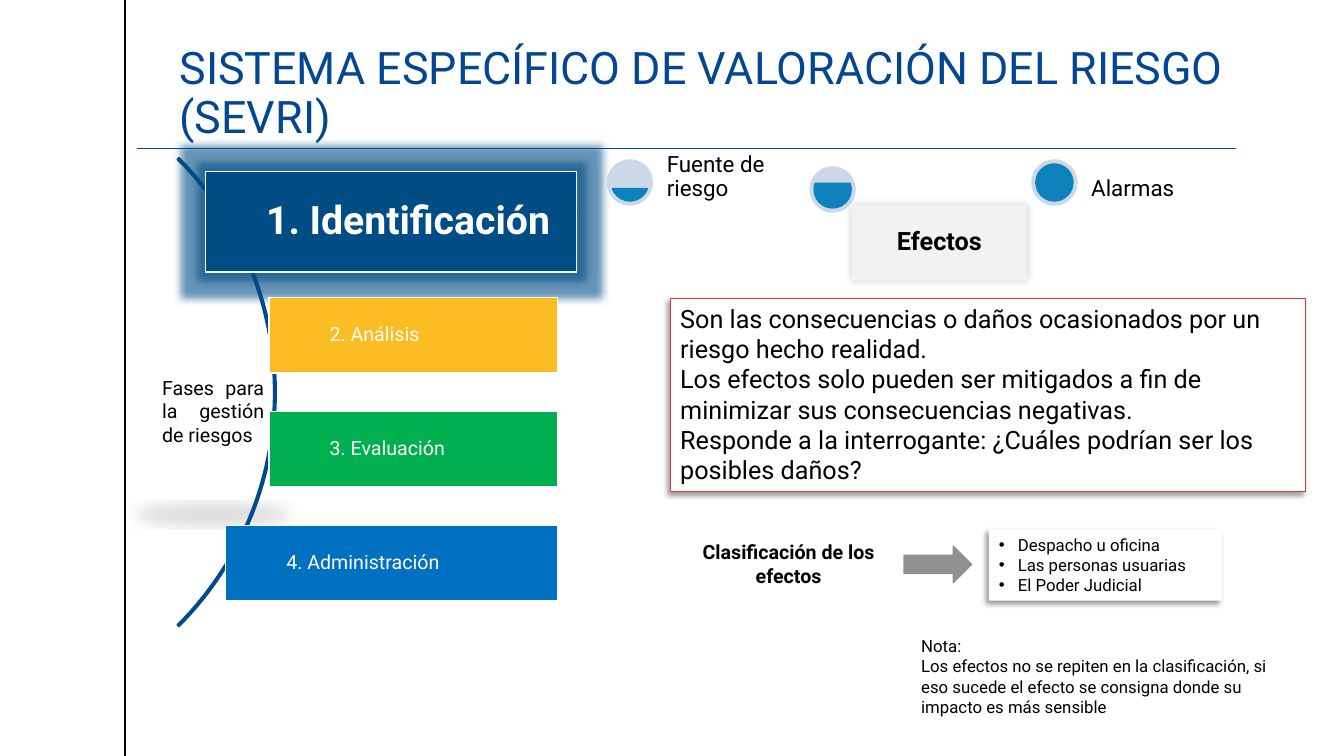
"""Builds the slide on the effects step of the SEVRI risk assessment system."""
from dataclasses import dataclass

from lxml.etree import SubElement
from pptx import Presentation
from pptx.dml.color import RGBColor
from pptx.enum.shapes import MSO_CONNECTOR, MSO_SHAPE
from pptx.enum.text import MSO_ANCHOR, MSO_AUTO_SIZE, PP_ALIGN
from pptx.oxml.ns import qn
from pptx.util import Pt


@dataclass(frozen=True)
class Theme:
    font: str = "Roboto"
    black: str = "000000"
    white: str = "FFFFFF"
    title: str = "034793"
    navy: str = "004D86"
    yellow: str = "FCBD24"
    green: str = "00B050"
    blue: str = "0070C0"
    red: str = "EC3A3B"
    gray: str = "909090"
    panel: str = "F2F2F2"
    dial: str = "CCD8E7"
    level: str = "0D81BB"
    title_size: int = 32
    active_size: int = 28
    large: int = 18
    label: int = 16
    body: int = 14
    small: int = 12


theme = Theme()


def style(shape, fill, line=None, effect=None, alpha=0, **settings):
    """Sets the fill, the outline and an optional shadow or glow."""
    shape.fill.solid()
    shape.fill.fore_color.rgb = RGBColor.from_string(fill)
    if line:
        shape.line.color.rgb = RGBColor.from_string(line)
        shape.line.width = Pt(1)
    else:
        shape.line.fill.background()
    shape.shadow.inherit = False
    if effect:
        effects = shape._element.spPr.find(qn("a:effectLst"))
        node = SubElement(effects, qn(effect), {key: str(value) for key, value in settings.items()})
        color = SubElement(node, qn("a:srgbClr"), val=theme.navy if effect == "a:glow" else theme.black)
        SubElement(color, qn("a:alpha"), val=str(alpha * 1000))
    return shape


def write(shape, lines, size, color=theme.black, bold=False, align=PP_ALIGN.LEFT,
          anchor=MSO_ANCHOR.TOP, insets=(7.2, 3.6, 7.2, 3.6), spacing=1.0, bullet=None):
    """Fills a shape with one paragraph per line."""
    frame = shape.text_frame
    frame.word_wrap = True
    frame.auto_size = MSO_AUTO_SIZE.NONE
    frame.vertical_anchor = anchor
    frame.margin_left, frame.margin_top, frame.margin_right, frame.margin_bottom = map(Pt, insets)
    for index, line in enumerate(lines):
        para = frame.add_paragraph() if index else frame.paragraphs[0]
        para.alignment = align
        para.line_spacing = spacing
        para.space_before = para.space_after = Pt(0)
        if bullet:
            properties = para._p.get_or_add_pPr()
            properties.set("marL", str(Pt(13.5)))
            properties.set("indent", str(Pt(-13.5)))
            SubElement(properties, qn("a:buFont"), typeface="Arial")
            SubElement(properties, qn("a:buChar"), char=bullet)
        span = para.add_run()
        span.text = line
        span.font.name = theme.font
        span.font.size = Pt(size)
        span.font.bold = bold
        span.font.color.rgb = RGBColor.from_string(color)


deck = Presentation()
deck.slide_width, deck.slide_height = Pt(960), Pt(540)
page = deck.slides.add_slide(deck.slide_layouts[1])
shapes = page.shapes
title, classes = page.placeholders
card_shadow = dict(effect="a:outerShdw", alpha=40, blurRad=Pt(4), dist=Pt(3), dir=8100000,
                   algn="tr", rotWithShape=0)

title.left, title.top, title.width, title.height = Pt(128.2), Pt(26.6), Pt(797.8), Pt(79.2)
write(title, ["SISTEMA ESPECÍFICO DE VALORACIÓN DEL RIESGO (SEVRI)"], theme.title_size, theme.title,
      anchor=MSO_ANCHOR.BOTTOM, insets=(0, 3.6, 0, 3.6), spacing=0.9)

classes.left, classes.top, classes.width, classes.height = Pt(706.3), Pt(378), Pt(166.3), Pt(51.1)
style(classes, theme.white, **card_shadow)
write(classes, ["Despacho u oficina", "Las personas usuarias", "El Poder Judicial"], theme.small,
      align=PP_ALIGN.JUSTIFY, bullet="•")

for start_x, start_y, end_x, end_y, color, weight in (
    (89.3, 0, 89.3, 540, theme.black, 1),
    (97.9, 105.8, 882.7, 105.8, theme.navy, 0.5),
):
    rule = shapes.add_connector(MSO_CONNECTOR.STRAIGHT, Pt(start_x), Pt(start_y), Pt(end_x), Pt(end_y))
    rule.line.color.rgb = RGBColor.from_string(color)
    rule.line.width = Pt(weight)
    SubElement(rule._element.spPr, qn("a:effectLst"))

caption = shapes.add_shape(MSO_SHAPE.OVAL, Pt(90.7), Pt(252.7), Pt(123.1), Pt(82.1))
style(caption, theme.white, effect="a:outerShdw", alpha=15, blurRad=Pt(12), dist=Pt(25),
      dir=5400000, sx=90000, sy=-19000, rotWithShape=0)
write(caption, ["Fases para la gestión de riesgos"], theme.body, align=PP_ALIGN.JUSTIFY)

arc = shapes.add_shape(MSO_SHAPE.BLOCK_ARC, Pt(-276.5), Pt(43.2), Pt(473.8), Pt(473.8))
arc.adjustments[0], arc.adjustments[1], arc.adjustments[2] = 189, 27, 0.004
style(arc, theme.title, theme.navy)

active = shapes.add_shape(MSO_SHAPE.RECTANGLE, Pt(146.9), Pt(122.4), Pt(265), Pt(72))
style(active, theme.navy, theme.white, effect="a:glow", alpha=60, rad=Pt(12))
write(active, ["1. Identificación"], theme.active_size, theme.white, bold=True,
      anchor=MSO_ANCHOR.MIDDLE, insets=(43.2, 5.8, 5.8, 5.8), spacing=0.9)

phases = (
    ("2. Análisis", 192.2, theme.yellow),
    ("3. Evaluación", 192.2, theme.green),
    ("4. Administración", 161.3, theme.blue),
)
for index, (name, left, color) in enumerate(phases):
    phase = shapes.add_shape(MSO_SHAPE.RECTANGLE, Pt(left), Pt(212.4 + 81.4 * index),
                             Pt(398.2 - left), Pt(54))
    style(phase, color, theme.white)
    write(phase, [name], theme.body, theme.white, anchor=MSO_ANCHOR.MIDDLE,
          insets=(43.2, 2.9, 2.9, 2.9), spacing=0.9)

dials = (
    (433.4, 113.8, 11.68, 96.32, "Fuente de riesgo"),
    (578.2, 118.8, 204.32, 119.68, None),
    (736.6, 113.8, 162, 162, "Alarmas"),
)
for left, top, start, end, name in dials:
    dial = shapes.add_shape(MSO_SHAPE.OVAL, Pt(left), Pt(top), Pt(33.1), Pt(33.1))
    style(dial, theme.dial)
    level = shapes.add_shape(MSO_SHAPE.CHORD, Pt(left + 3.3), Pt(top + 3.3), Pt(26.5), Pt(26.5))
    level.adjustments[0], level.adjustments[1] = start, end
    style(level, theme.level, theme.level)
    if name:
        label = shapes.add_textbox(Pt(left + 40), Pt(top), Pt(97.9), Pt(33.1))
        write(label, [name], theme.label, anchor=MSO_ANCHOR.BOTTOM, insets=(2.9,) * 4, spacing=0.9)

effects_label = shapes.add_shape(MSO_SHAPE.RECTANGLE, Pt(608.4), Pt(146.2), Pt(125.3), Pt(54))
style(effects_label, theme.panel, effect="a:outerShdw", alpha=20, blurRad=Pt(6), dist=0,
      dir=13500000, rotWithShape=0)
write(effects_label, ["Efectos"], theme.large, bold=True, align=PP_ALIGN.CENTER,
      anchor=MSO_ANCHOR.MIDDLE, insets=(3.6,) * 4, spacing=0.9)

definition = shapes.add_shape(MSO_SHAPE.RECTANGLE, Pt(478.8), Pt(213.1), Pt(453.6), Pt(138.2))
style(definition, theme.white, theme.red, **card_shadow)
write(definition, [
    "Son las consecuencias o daños ocasionados por un riesgo hecho realidad.",
    "Los efectos solo pueden ser mitigados a fin de minimizar sus consecuencias negativas.",
    "Responde a la interrogante: ¿Cuáles podrían ser los posibles daños?",
], theme.large)

heading = shapes.add_textbox(Pt(480.2), Pt(382.3), Pt(166.3), Pt(41))
write(heading, ["Clasificación de los efectos"], theme.body, bold=True, align=PP_ALIGN.CENTER)

arrow = shapes.add_shape(MSO_SHAPE.RIGHT_ARROW, Pt(645.8), Pt(390.2), Pt(48.2), Pt(25.9))
style(arrow, theme.gray, theme.gray)

note = shapes.add_textbox(Pt(650.9), Pt(450.7), Pt(281.5), Pt(65.5))
write(note, [
    "Nota:",
    "Los efectos no se repiten en la clasificación, si eso sucede el efecto se consigna donde su "
    "impacto es más sensible",
], theme.small)

deck.save("out.pptx")
